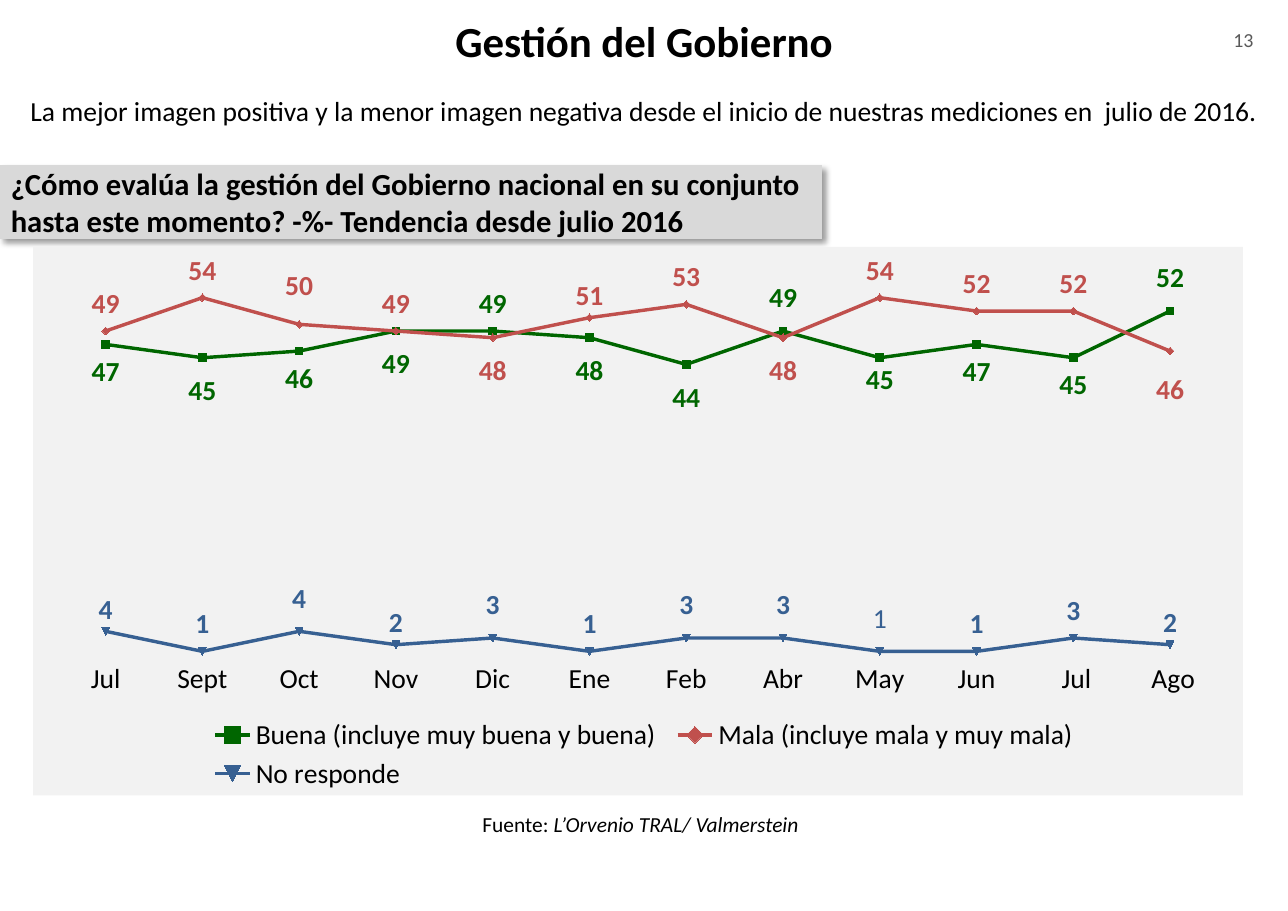
from lxml import etree
from pptx import Presentation
from pptx.chart.data import CategoryChartData
from pptx.dml.color import RGBColor
from pptx.enum.chart import (XL_CHART_TYPE, XL_LABEL_POSITION, XL_LEGEND_POSITION,
                             XL_MARKER_STYLE, XL_TICK_MARK)
from pptx.enum.shapes import MSO_SHAPE
from pptx.enum.text import MSO_ANCHOR, PP_ALIGN
from pptx.oxml import parse_xml
from pptx.oxml.ns import nsdecls, qn
from pptx.util import Inches, Pt

LEFT, CENTER = PP_ALIGN.LEFT, PP_ALIGN.CENTER
MIDDLE, TOP = MSO_ANCHOR.MIDDLE, MSO_ANCHOR.TOP
SQUARE, DIAMOND = XL_MARKER_STYLE.SQUARE, XL_MARKER_STYLE.DIAMOND
AUTOMATIC = None

FONT = "Calibri"
WIDTH, HEIGHT = 11.69, 8.27
COLORS = {
    "text": "000000", "number": "595959", "banner": "D9D9D9", "panel": "F2F2F2",
    "good": "006600", "bad": "C0504D", "none": "376092",
}
MONTHS = ["Jul", "Sept", "Oct", "Nov", "Dic", "Ene", "Feb", "Abr", "May", "Jun", " Jul", " Ago"]
# name, colour, marker, values, label offsets as hundredths of the chart height
SERIES = [
    ("Buena (incluye muy buena y buena)", "good", SQUARE,
     [47, 45, 46, 49, 49, 48, 44, 49, 45, 47, 45, 52],
     [5, 6, 5, 6, -5, 6, 6, -6, 4, 5, 5, -6]),
    ("Mala (incluye mala y muy mala)", "bad", DIAMOND,
     [49, 54, 50, 49, 48, 51, 53, 48, 54, 52, 52, 46],
     [-5, -5, -7, -5, 6, -4, -5, 6, -5, -5, -5, 7]),
    ("No responde", "none", AUTOMATIC,
     [4, 1, 4, 2, 3, 1, 3, 3, 1, 1, 3, 2],
     [-4, -5, -6, -4, -6, -5, -6, -6, -6, -5, -5, -4]),
]
PLAIN_LABEL = ("none", MONTHS.index("May"))
NO_LEADER_LINES = (
    f'<c:extLst {nsdecls("c")}><c:ext uri="{{CE6537A1-D6FC-4f65-9D91-7224C49458BB}}" '
    'xmlns:c15="http://schemas.microsoft.com/office/drawing/2012/chart">'
    '<c15:showLeaderLines val="0"/></c:ext></c:extLst>')


def color(name):
    return RGBColor.from_string(COLORS[name])


def style_font(font, size, color_name="text", bold=False):
    font.name, font.size, font.bold = FONT, Pt(size), bold
    font.color.rgb = color(color_name)


def fill_text(shape, runs, size, color_name="text", bold=False, align=CENTER, anchor=MIDDLE):
    """Write one paragraph from (text, italic) runs."""
    frame = shape.text_frame
    frame.word_wrap = True
    frame.vertical_anchor = anchor
    paragraph = frame.paragraphs[0]
    paragraph.alignment = align
    for text, italic in runs:
        run = paragraph.add_run()
        run.text = text
        style_font(run.font, size, color_name, bold)
        run.font.italic = italic


def add_text(slide, box, runs, size, **options):
    shape = slide.shapes.add_textbox(*map(Inches, box))
    fill_text(shape, runs, size, **options)


def add_title(slide, text):
    title = slide.shapes.title
    title.left, title.top, title.width, title.height = map(Inches, (0, -0.1, WIDTH, 0.94))
    fill_text(title, [(text, False)], 28, bold=True)


def add_banner(slide, box, text):
    banner = slide.shapes.add_shape(MSO_SHAPE.RECTANGLE, *map(Inches, box))
    banner.fill.solid()
    banner.fill.fore_color.rgb = color("banner")
    banner.line.fill.background()
    banner.shadow.inherit = False
    effects = banner._element.spPr.find(qn("a:effectLst"))
    effects.append(parse_xml(
        f'<a:outerShdw {nsdecls("a")} blurRad="{Pt(4)}" dist="{Pt(3)}" dir="2700000" algn="tl">'
        f'<a:srgbClr val="{COLORS["text"]}"><a:alpha val="40000"/></a:srgbClr></a:outerShdw>'))
    fill_text(banner, [(text, False)], 20, bold=True, align=LEFT)


def make_layout(inner=False, edge=True, **shares):
    """Manual layout; with edge, x and y count from the chart's corner."""
    layout = etree.Element(qn("c:layout"))
    manual = etree.SubElement(layout, qn("c:manualLayout"))
    settings = [("layoutTarget", "inner")] if inner else []
    if edge:
        settings += [("xMode", "edge"), ("yMode", "edge")]
    for tag, value in settings + list(shares.items()):
        etree.SubElement(manual, qn(f"c:{tag}")).set("val", str(value))
    return layout


def set_layout(parent, layout, index):
    for old in parent.findall(qn("c:layout")):
        parent.remove(old)
    parent.insert(index, layout)


def style_series(series, color_name, marker, offsets):
    series.smooth = False
    line = series.format.line
    line.color.rgb = color(color_name)
    line.width = Pt(2.25)
    series.marker.style, series.marker.size = marker, 5
    for part in (series.marker.format.fill, series.marker.format.line.fill):
        part.solid()
        part.fore_color.rgb = color(color_name)
    for index, offset in enumerate(offsets):
        label = series.points[index].data_label
        style_font(label.font, 18, color_name, (color_name, index) != PLAIN_LABEL)
        label.position = XL_LABEL_POSITION.CENTER
        element = series._element.find(qn("c:dLbls")).findall(qn("c:dLbl"))[index]
        set_layout(element, make_layout(edge=False, x=0, y=offset / 100), 1)
    labels = series._element.find(qn("c:dLbls"))
    for leader in labels.findall(qn("c:showLeaderLines")):
        leader.set("val", "0")
    labels.append(parse_xml(NO_LEADER_LINES))


def style_axes(chart):
    months, values = chart.category_axis, chart.value_axis
    months.major_tick_mark = XL_TICK_MARK.NONE
    months.format.line.fill.background()
    values.minimum_scale, values.maximum_scale = 0, 60
    values.has_major_gridlines = False
    values.visible = False


def add_trend_chart(slide, box):
    data = CategoryChartData()
    data.categories = MONTHS
    for name, _, _, values, _ in SERIES:
        data.add_series(name, values)
    chart = slide.shapes.add_chart(XL_CHART_TYPE.LINE_MARKERS, *map(Inches, box), data).chart
    style_font(chart.font, 18)
    chart.has_title = False
    style_axes(chart)
    chart.plots[0].vary_by_categories = False
    for series, (_, color_name, marker, _, offsets) in zip(chart.plots[0].series, SERIES):
        style_series(series, color_name, marker, offsets)

    chart.has_legend = True
    chart.legend.position = XL_LEGEND_POSITION.BOTTOM
    chart.legend.include_in_layout = False
    set_layout(chart.legend._element, make_layout(x=0.14, y=0.85, w=0.73, h=0.15), 1)
    plot_area = chart._chartSpace.chart.plotArea
    set_layout(plot_area, make_layout(inner=True, x=0.02, y=0.02, w=0.96, h=0.73), 0)
    chart._chartSpace.chart.addnext(parse_xml(
        f'<c:spPr {nsdecls("c", "a")}><a:solidFill><a:srgbClr val="{COLORS["panel"]}"/>'
        '</a:solidFill><a:ln><a:noFill/></a:ln></c:spPr>'))


def main():
    presentation = Presentation()
    presentation.slide_width, presentation.slide_height = Inches(WIDTH), Inches(HEIGHT)
    slide = presentation.slides.add_slide(presentation.slide_layouts[5])
    add_title(slide, "Gestión del Gobierno")
    add_text(slide, (10.84, 0.2, 0.89, 0.44), [("13", False)], 13,
             color_name="number", anchor=TOP)
    add_text(slide, (0, 0.8, WIDTH, 0.4),
             [("La mejor imagen positiva y la menor imagen negativa desde el inicio de "
               "nuestras mediciones en  julio de 2016.", False)], 18)
    add_banner(slide, (0, 1.5, 7.46, 0.67),
               "¿Cómo evalúa la gestión del Gobierno nacional en su conjunto hasta este "
               "momento? -%- Tendencia desde julio 2016")
    add_trend_chart(slide, (0.3, 2.24, 10.98, 4.98))
    add_text(slide, (4.28, 7.31, 3.13, 0.34),
             [("Fuente: ", False), ("L’Orvenio TRAL/ Valmerstein", True)], 14,
             align=LEFT, anchor=TOP)
    presentation.save("out.pptx")


if __name__ == "__main__":
    main()
